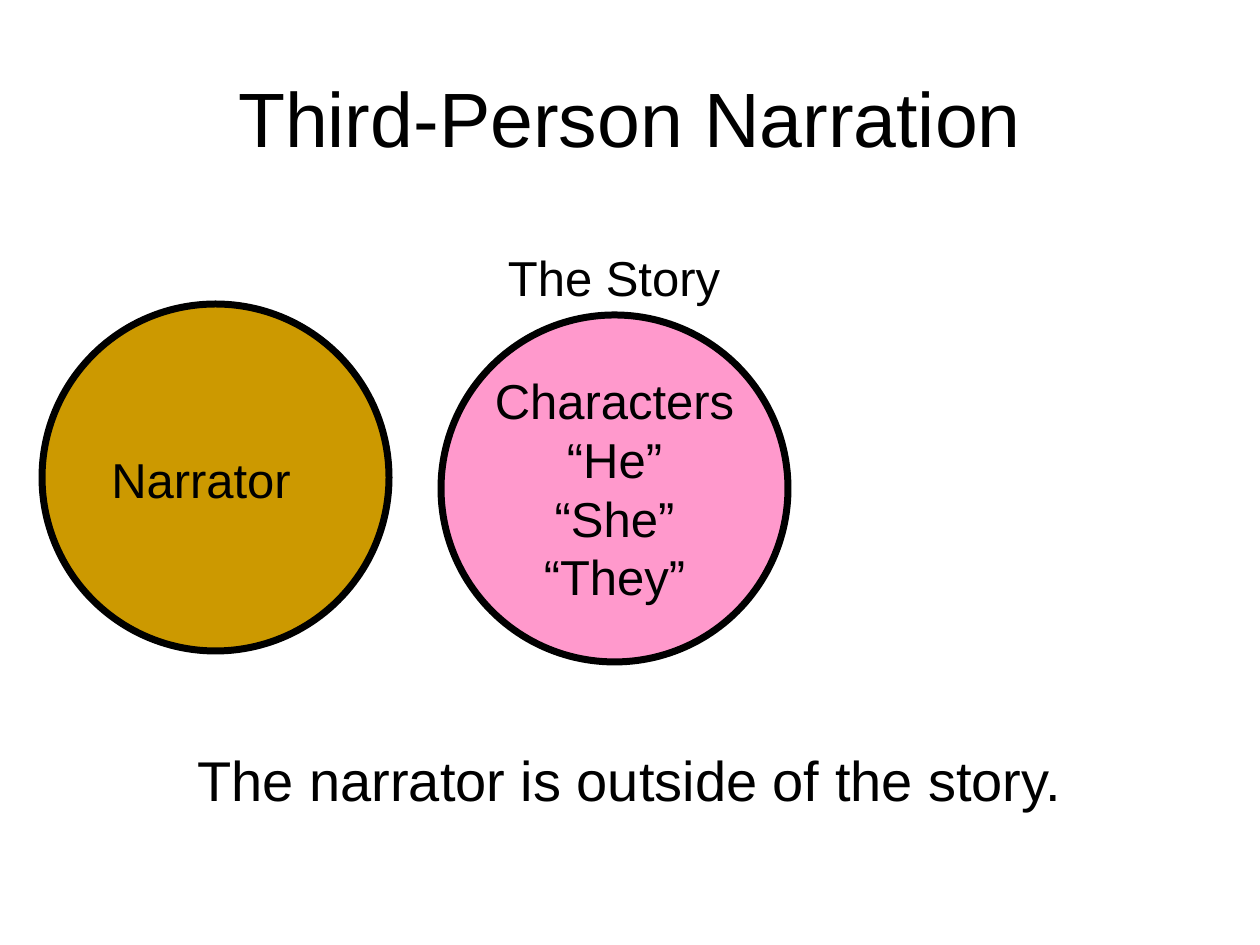
from pptx import Presentation
from pptx import util as u
from pptx.dml.color import RGBColor
from pptx.enum import shapes, text
from lxml import etree

PX = 914400 / 126
COLORS = {"ink": "000000", "narrator": "CC9900", "story": "FF99CC"}
FONT = "Arial"
DRAWING_NS = "{http://schemas.openxmlformats.org/drawingml/2006/main}"


def px(length):
    """Turn pixels into EMU."""
    return u.Emu(round(length * PX))


def place(part, box):
    """Move a part to a left, top, width, height box."""
    part.left, part.top, part.width, part.height = map(px, box)


def write(part, wording, size, anchor, inset=0):
    """Fill a part with centred text."""
    frame = part.text_frame
    frame.text = wording
    frame.word_wrap = True
    frame.auto_size = text.MSO_AUTO_SIZE.NONE
    frame.vertical_anchor = anchor
    frame.margin_left = frame.margin_right = px(inset)
    frame.margin_top = frame.margin_bottom = px(inset)
    for line in frame.paragraphs:
        line.alignment = text.PP_ALIGN.CENTER
        line.space_before = u.Pt(0)
        for run in line.runs:
            run.font.name = FONT
            run.font.size = u.Pt(size)
            run.font.color.rgb = RGBColor.from_string(COLORS["ink"])


def add_title(slide, box):
    """Place the heading in the title placeholder."""
    heading = slide.shapes.title
    place(heading, box)
    write(heading, "Third-Person Narration", 44, text.MSO_ANCHOR.MIDDLE)


def add_conclusion(slide, box):
    """Place the closing sentence in the body placeholder, without a bullet."""
    conclusion = slide.placeholders[1]
    place(conclusion, box)
    write(conclusion, "The narrator is outside of the story.", 32, text.MSO_ANCHOR.TOP)
    properties = conclusion.text_frame.paragraphs[0]._p.get_or_add_pPr()
    properties.set("marL", "0")
    properties.set("indent", "0")
    etree.SubElement(properties, DRAWING_NS + "buNone")


def add_circle(slide, box, color, wording, label_box):
    """Group a circle with its label, which is placed relative to the circle."""
    left, top, width, height = box
    dx, dy, label_width, label_height = label_box
    group = slide.shapes.add_group_shape()
    circle = group.shapes.add_shape(shapes.MSO_SHAPE.OVAL, *map(px, box))
    circle.shadow.inherit = False
    circle.fill.solid()
    circle.fill.fore_color.rgb = RGBColor.from_string(COLORS[color])
    circle.line.color.rgb = RGBColor.from_string(COLORS["ink"])
    circle.line.width = u.Pt(4)
    label = group.shapes.add_textbox(
        *map(px, (left + dx, top + dy, label_width, label_height)))
    write(label, wording, 28, text.MSO_ANCHOR.MIDDLE)


def add_story_caption(slide, box):
    """Name the story above its circle."""
    caption = slide.shapes.add_textbox(*map(px, box))
    write(caption, "The Story", 28, text.MSO_ANCHOR.TOP, inset=6)


def main():
    """Build and save the slide."""
    deck = Presentation()
    deck.slide_width, deck.slide_height = px(1260), px(945)
    slide = deck.slides.add_slide(deck.slide_layouts[1])
    add_title(slide, (63, 38, 1134, 157))
    add_conclusion(slide, (42, 746, 1176, 136))
    add_circle(slide, (42, 304, 347, 347), "narrator", "Narrator",
               (55, 141, 208, 67))
    add_story_caption(slide, (346, 242, 536, 67))
    add_circle(slide, (441, 315, 347, 347), "story",
               "Characters\n“He”\n“She”\n“They”", (32, 55, 283, 236))
    deck.save("out.pptx")


if __name__ == "__main__":
    main()
